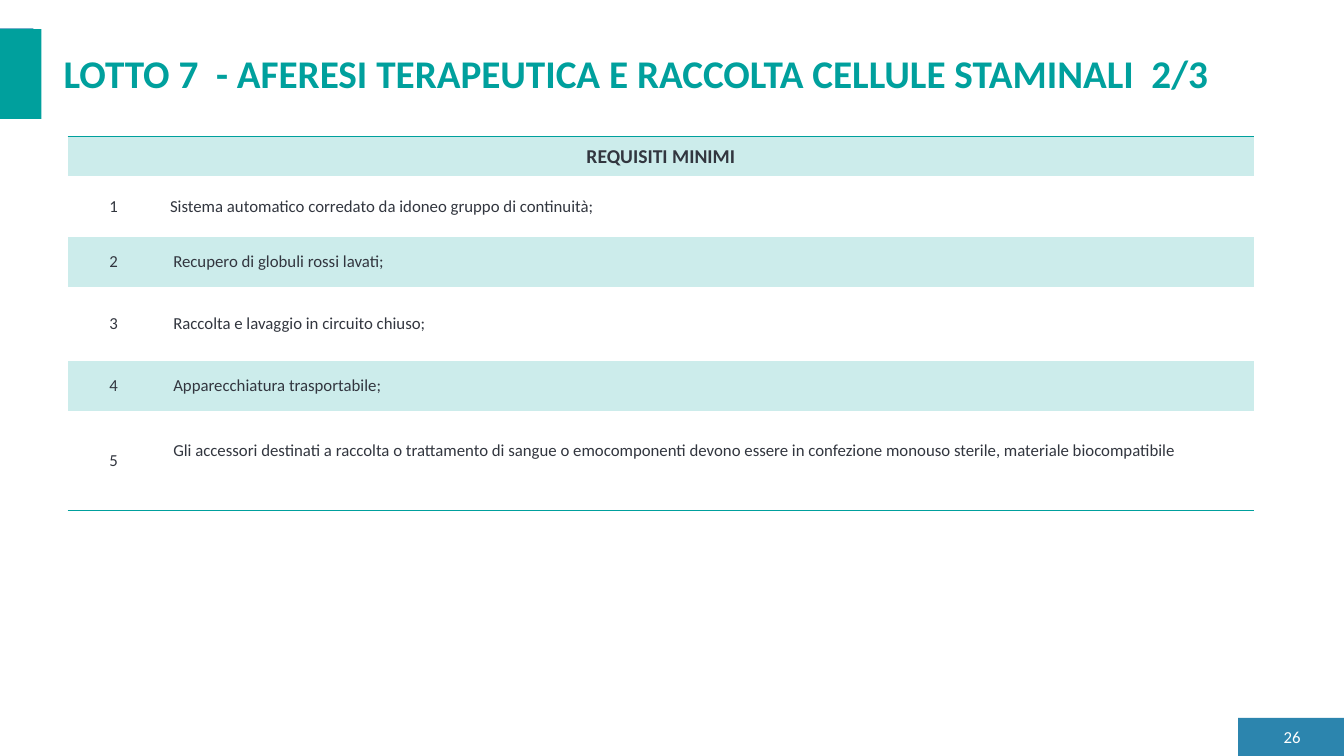
from dataclasses import dataclass

from lxml import etree
from pptx import Presentation
from pptx.dml.color import RGBColor
from pptx.enum import shapes, text
from pptx.oxml import ns
from pptx.util import Pt


@dataclass(frozen=True)
class Theme:
    teal: str = "00A09D"
    mint: str = "CCECEB"
    blue: str = "2C85AE"
    ink: str = "32363F"
    white: str = "FFFFFF"
    font: str = "Calibri"
    title_size: int = 28
    header_size: int = 14
    body_size: int = 12


THEME = Theme()
PLAIN_TABLE = "{2D5ABB26-0587-4C30-8999-92F81FD0307C}"
TITLE = "LOTTO 7  - AFERESI TERAPEUTICA E RACCOLTA CELLULE STAMINALI  2/3"
HEADER = "REQUISITI MINIMI"
REQUIREMENTS = [
    "Sistema automatico corredato da idoneo gruppo di continuità;",
    "Recupero di globuli rossi lavati;",
    "Raccolta e lavaggio in circuito chiuso;",
    "Apparecchiatura trasportabile;",
    "Gli accessori destinati a raccolta o trattamento di sangue o emocomponenti "
    "devono essere in confezione monouso sterile, materiale biocompatibile",
]
ROW_HEIGHTS = [28.2, 43.4, 35.5, 53.2, 35.5, 71.2]
NUMBER_WIDTH = 65.4


def set_all(target, **values):
    for name, value in values.items():
        setattr(target, name, value)


def write(frame, words, size, color, bold=False, align=text.PP_ALIGN.LEFT, indent=0):
    para = frame.paragraphs[0]
    para.alignment = align
    if indent:
        para._p.get_or_add_pPr().set("marL", str(Pt(indent)))
    span = para.add_run()
    span.text = words
    set_all(span.font, name=THEME.font, size=Pt(size), bold=bold)
    span.font.color.rgb = RGBColor.from_string(color)


def add_block(page, box, color):
    block = page.shapes.add_shape(shapes.MSO_SHAPE.RECTANGLE, *map(Pt, box))
    block.shadow.inherit = False
    block.fill.solid()
    block.fill.fore_color.rgb = RGBColor.from_string(color)
    block.line.fill.background()
    return block


def add_edge(cell, tag):
    edge = etree.Element(ns.qn(tag), w=str(Pt(1)))
    fill = etree.SubElement(edge, ns.qn("a:solidFill"))
    etree.SubElement(fill, ns.qn("a:srgbClr"), val=THEME.teal)
    cell._tc.get_or_add_tcPr().insert(0, edge)


# Title with the accent blocks at the left edge
def add_heading(page, box):
    left, top, width, height = box
    add_block(page, (0, top - 11.5, 23.8, 59.8), THEME.blue)
    add_block(page, (0, top - 10.8, 29.5, 64.1), THEME.teal)
    title = page.shapes.title
    set_all(title, left=Pt(left), top=Pt(top), width=Pt(width), height=Pt(height))
    frame = title.text_frame
    set_all(frame, word_wrap=True, vertical_anchor=text.MSO_ANCHOR.MIDDLE,
            auto_size=text.MSO_AUTO_SIZE.NONE)
    write(frame, TITLE, THEME.title_size, THEME.teal, bold=True)


# Numbered table of minimum requirements
def add_requirements(page, box):
    shape = page.shapes.add_table(len(ROW_HEIGHTS), 2, *map(Pt, box))
    table = shape.table
    table._tbl.tblPr.find(ns.qn("a:tableStyleId")).text = PLAIN_TABLE
    for column, width in zip(table.columns, (NUMBER_WIDTH, box[2] - NUMBER_WIDTH)):
        column.width = Pt(width)
    for row_number, (row, height) in enumerate(zip(table.rows, ROW_HEIGHTS)):
        row.height = Pt(height)
        for cell in row.cells:
            set_all(cell, margin_left=Pt(5), margin_right=Pt(5), margin_top=0,
                    margin_bottom=0, vertical_anchor=text.MSO_ANCHOR.MIDDLE)
            if row_number % 2 == 0 and row_number < 5 or row_number == 0:
                cell.fill.solid()
                cell.fill.fore_color.rgb = RGBColor.from_string(THEME.mint)
            else:
                cell.fill.background()

    # Header across both columns, and the outer rules
    header = table.cell(0, 0)
    header.merge(table.cell(0, 1))
    write(header.text_frame, HEADER, THEME.header_size, THEME.ink, True,
          text.PP_ALIGN.CENTER)
    last = len(REQUIREMENTS)
    for column in range(2):
        add_edge(table.cell(0, column), "a:lnT")
        add_edge(table.cell(last, column), "a:lnB")

    # Numbers and wording
    for number, words in enumerate(REQUIREMENTS, 1):
        write(table.cell(number, 0).text_frame, str(number), THEME.body_size,
              THEME.ink, align=text.PP_ALIGN.CENTER)
        write(table.cell(number, 1).text_frame, words, THEME.body_size,
              THEME.ink, indent=2.7 if number == 1 else 5)
    table.cell(last, 1).margin_bottom = Pt(14)


# Page number in the corner
def add_page_number(page, box, number):
    frame = add_block(page, box, THEME.blue).text_frame
    set_all(frame, margin_right=Pt(31), margin_top=0, margin_bottom=0,
            vertical_anchor=text.MSO_ANCHOR.MIDDLE)
    write(frame, str(number), THEME.body_size, THEME.white,
          align=text.PP_ALIGN.RIGHT)


def main():
    deck = Presentation()
    set_all(deck, slide_width=Pt(960), slide_height=Pt(540))
    page = deck.slides.add_slide(deck.slide_layouts.get_by_name("Title Only"))
    add_heading(page, (38.2, 31.7, 886.3, 41))
    add_requirements(page, (48.4, 97.6, 847.4, sum(ROW_HEIGHTS)))
    add_page_number(page, (884.3, 512.7, 75.7, 27.3), 26)
    deck.save("out.pptx")


if __name__ == "__main__":
    main()
